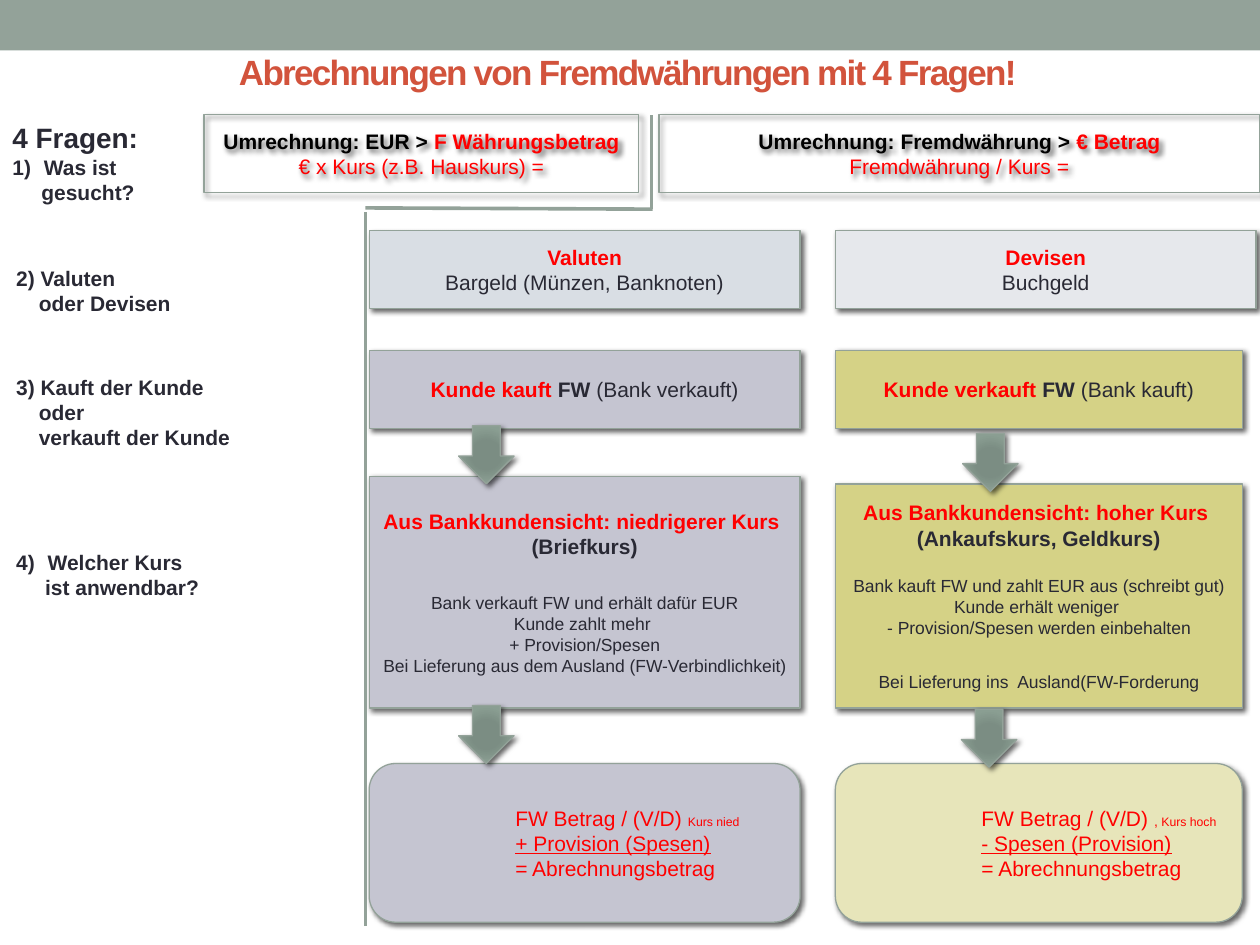
"""Build the slide on settling foreign-currency transactions with four questions."""
from pptx import Presentation
from pptx import util as u
from pptx.dml.color import RGBColor
from pptx.enum import shapes, text
from pptx.oxml import ns, parse_xml

PX = 9144
COLORS = {
    "sage": "93A299", "title": "D2533C", "red": "FF0000", "ink": "292934",
    "black": "000000", "pale": "D9DEE4", "mist": "E6E8EC", "lilac": "C5C5D1",
    "olive": "D5D286", "cream": "E7E5BA",
}
STYLES = {
    "title": (20, True, False, "title"), "heading": (16, True, False, "ink"),
    "key": (12, True, False, "red"), "bold": (12, True, False, "ink"),
    "black": (12, True, False, "black"), "body": (12, False, False, "ink"),
    "small": (10, False, False, "ink"), "red": (12, False, False, "red"),
    "sum": (12, False, True, "red"), "mark": (8, False, False, "red"),
    "tiny": (7, False, False, "red"),
}
A = ns.nsdecls("a")
SHADOW = (f'<a:outerShdw {A} blurRad="38100" dist="25400" dir="2700000" algn="br" rotWithShape="0">'
          '<a:srgbClr val="000000"><a:alpha val="60000"/></a:srgbClr></a:outerShdw>')
STOPS = [(0, "7B8E82"), (34, "7B8D83"), (70, "8A9E92"), (100, "93A299")]
GRADIENT = (f'<a:gradFill {A} rotWithShape="1"><a:gsLst>'
            + "".join(f'<a:gs pos="{pos * 1000}"><a:srgbClr val="{tone}"/></a:gs>' for pos, tone in STOPS)
            + '</a:gsLst><a:path path="circle"><a:fillToRect l="100000" t="100000" r="100000" b="100000"/>'
            '</a:path></a:gradFill>')


def write(frame, paras, align):
    """Fill a text frame from (paragraph format, spans) pairs."""
    for number, (layout, spans) in enumerate(paras):
        para = frame.paragraphs[0] if number == 0 else frame.add_paragraph()
        para.alignment = align
        para.space_before = u.Pt(layout.get("before", 0))
        props = para._p.get_or_add_pPr()
        if "left" in layout:
            props.set("marL", str(layout["left"] * PX))
            props.set("indent", str(layout.get("first", 0) * PX))
        if "start" in layout:
            props.append(parse_xml(f'<a:buAutoNum {A} type="arabicParenR" startAt="{layout["start"]}"/>'))
        for words, style in spans:
            span = para.add_run()
            span.text = words
            size, bold, underline, color = STYLES[style]
            for name, value in {"name": "Arial", "size": u.Pt(size), "bold": bold,
                                "underline": underline}.items():
                setattr(span.font, name, value)
            span.font.color.rgb = RGBColor.from_string(COLORS[color])


def add_box(kind, place, fill):
    """Add an outlined shape with a drop shadow."""
    box = page.shapes.add_shape(kind, *(n * PX for n in place))
    if fill:
        box.fill.solid()
        box.fill.fore_color.rgb = RGBColor.from_string(COLORS[fill])
    else:
        box.fill.background()
    box.line.color.rgb = RGBColor.from_string(COLORS["sage"])
    box.line.width = u.Pt(0.75)
    box.shadow.inherit = False
    box._element.spPr.find(ns.qn("a:effectLst")).append(parse_xml(SHADOW))
    return box


deck = Presentation()
deck.slide_width, deck.slide_height = 1000 * PX, 750 * PX
page = deck.slides.add_slide(deck.slide_layouts[5])
RECT, ROUND = shapes.MSO_SHAPE.RECTANGLE, shapes.MSO_SHAPE.ROUNDED_RECTANGLE
CENTER, LEFT = text.PP_ALIGN.CENTER, text.PP_ALIGN.LEFT

band = page.shapes.add_shape(RECT, 0, 0, 1000 * PX, 40 * PX)
band.shadow.inherit = False
band.fill.solid()
band.fill.fore_color.rgb = RGBColor.from_string(COLORS["sage"])
band.line.fill.background()

title = page.shapes.title
for name, value in {"left": 16, "top": 37, "width": 964, "height": 39}.items():
    setattr(title, name, value * PX)
title.text_frame.vertical_anchor = text.MSO_ANCHOR.MIDDLE
title.text_frame.auto_size = text.MSO_AUTO_SIZE.NONE
write(title.text_frame, [({}, [("Abrechnungen von Fremdwährungen mit 4 Fragen!", "title")])], CENTER)
title.text_frame.paragraphs[0].runs[0]._r.get_or_add_rPr().set("spc", "-100")

COL1, COL2, W1, W2 = 293, 663, 342, 323
boxes = [
    (RECT, (COL1, 183, W1, 62), "pale", [
        ({}, [("Valuten", "key")]), ({}, [("Bargeld (Münzen, Banknoten)", "body")])]),
    (RECT, (COL2, 183, 334, 62), "mist", [
        ({}, [("Devisen", "key")]), ({}, [("Buchgeld", "body")])]),
    (RECT, (COL2, 384, W2, 178), "olive", [
        ({}, [("Aus Bankkundensicht: hoher Kurs ", "key")]),
        ({}, [("(Ankaufskurs, Geldkurs)", "bold")]),
        ({"before": 14}, [("Bank kauft FW und zahlt EUR aus (schreibt gut)", "small")]),
        ({}, [("Kunde erhält weniger ", "small")]),
        ({}, [("- Provision/Spesen werden einbehalten", "small")]),
        ({"before": 19}, [("Bei Lieferung ins  Ausland(FW-Forderung", "small")])]),
    (RECT, (COL1, 378, W1, 184), "lilac", [
        ({}, [("Aus Bankkundensicht: niedrigerer Kurs ", "key")]),
        ({}, [("(Briefkurs)", "bold")]),
        ({"before": 19}, [("Bank verkauft FW und erhält dafür EUR", "small")]),
        ({}, [("Kunde zahlt mehr ", "small")]),
        ({}, [("+ Provision/Spesen", "small")]),
        ({}, [("Bei Lieferung aus dem Ausland (FW-Verbindlichkeit)", "small")])]),
    (RECT, (COL1, 278, W1, 62), "lilac", [
        ({}, [("Kunde kauft ", "key"), ("FW ", "bold"), ("(Bank verkauft)", "body")])]),
    (RECT, (COL2, 278, W2, 62), "olive", [
        ({}, [("Kunde verkauft ", "key"), ("FW ", "bold"), ("(Bank kauft)", "body")])]),
    (ROUND, (COL1, 606, W1, 126), "lilac", [
        ({"left": 100}, [("FW Betrag / (V/D) ", "red"), ("Kurs nied", "tiny")]),
        ({"left": 100}, [("+ Provision (Spesen)", "sum")]),
        ({"left": 100}, [("= Abrechnungsbetrag", "red")])]),
    (ROUND, (COL2, 606, W2, 126), "cream", [
        ({"left": 100}, [("FW Betrag / (V/D) ", "red"), (",", "mark"), (" Kurs hoch", "tiny")]),
        ({"left": 100}, [("- Spesen (Provision)", "sum")]),
        ({"left": 100}, [("= Abrechnungsbetrag", "red")])]),
    (RECT, (162, 91, 345, 62), None, [
        ({}, [("Umrechnung: EUR > ", "black"), ("F Währungsbetrag", "key")]),
        ({}, [("€ x Kurs (z.B. Hauskurs) =", "red")])]),
    (RECT, (523, 91, 477, 62), None, [
        ({}, [("Umrechnung: Fremdwährung > ", "black"), ("€ Betrag", "key")]),
        ({}, [("Fremdwährung / Kurs =", "red")])]),
]
for kind, place, fill, paras in boxes:
    box = add_box(kind, place, fill)
    box.text_frame.vertical_anchor = text.MSO_ANCHOR.MIDDLE
    write(box.text_frame, paras, LEFT if kind == ROUND else CENTER)

for left, top in [(364, 338), (764, 344), (364, 560), (763, 563)]:
    arrow = add_box(shapes.MSO_SHAPE.DOWN_ARROW, (left, top, 44, 46), "sage")
    props = arrow._element.spPr
    props.replace(props.find(ns.qn("a:solidFill")), parse_xml(GRADIENT))

questions = [
    ((0, 91, 121, 77), False, [
        ({}, [("4 Fragen:", "heading")]),
        ({"left": 25, "first": -25, "start": 1}, [("Was ist", "bold")]),
        ({"left": 23}, [("gesucht?", "bold")])]),
    ((3, 206, 149, 50), False, [
        ({}, [("2) Valuten", "bold")]), ({"left": 18}, [("oder Devisen", "bold")])]),
    ((3, 292, 192, 71), False, [
        ({}, [("3) Kauft der Kunde", "bold")]), ({"left": 18}, [("oder", "bold")]),
        ({"left": 18}, [("verkauft der Kunde", "bold")])]),
    ((3, 431, 192, 50), True, [
        ({"left": 25, "first": -25, "start": 4}, [("Welcher Kurs", "bold")]),
        ({"left": 23}, [("ist anwendbar?", "bold")])]),
]
for place, wrap, paras in questions:
    label = page.shapes.add_textbox(*(n * PX for n in place))
    label.text_frame.word_wrap = wrap
    label.text_frame.auto_size = text.MSO_AUTO_SIZE.SHAPE_TO_FIT_TEXT
    write(label.text_frame, paras, LEFT)

for ends in [(290, 165, 518, 166), (517, 166, 517, 91), (290, 735, 290, 168)]:
    line = page.shapes.add_connector(shapes.MSO_CONNECTOR.STRAIGHT, *(n * PX for n in ends))
    line.line.color.rgb = RGBColor.from_string(COLORS["sage"])
    line.line.width = u.Pt(2.08)
    line._element.spPr.append(parse_xml(f"<a:effectLst {A}/>"))

deck.save("out.pptx")
